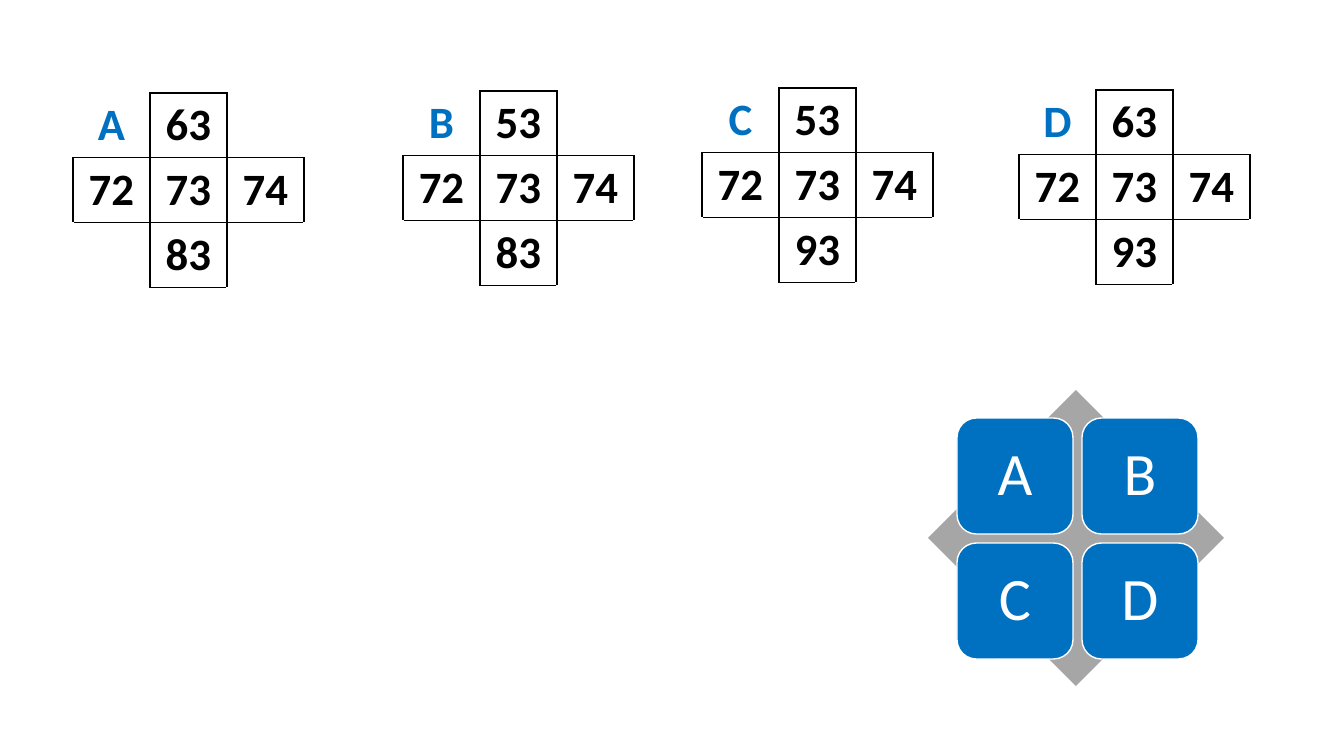
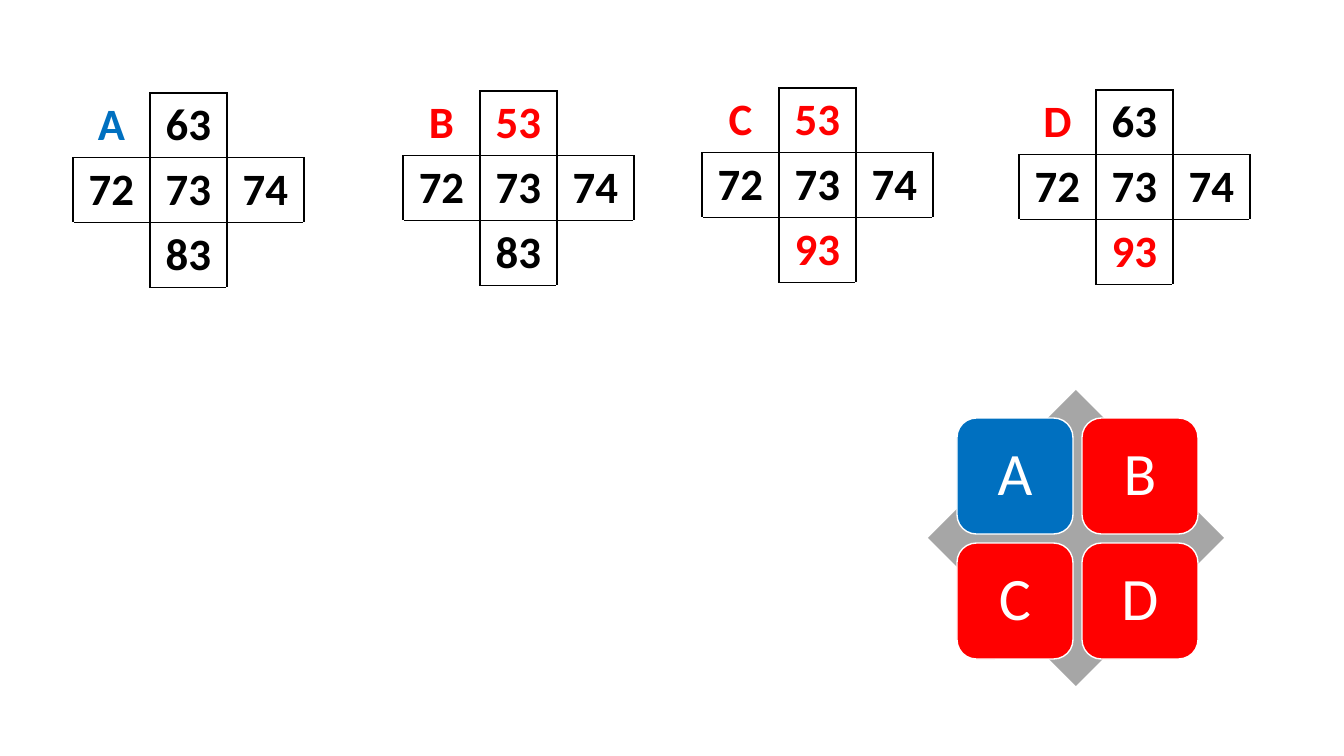
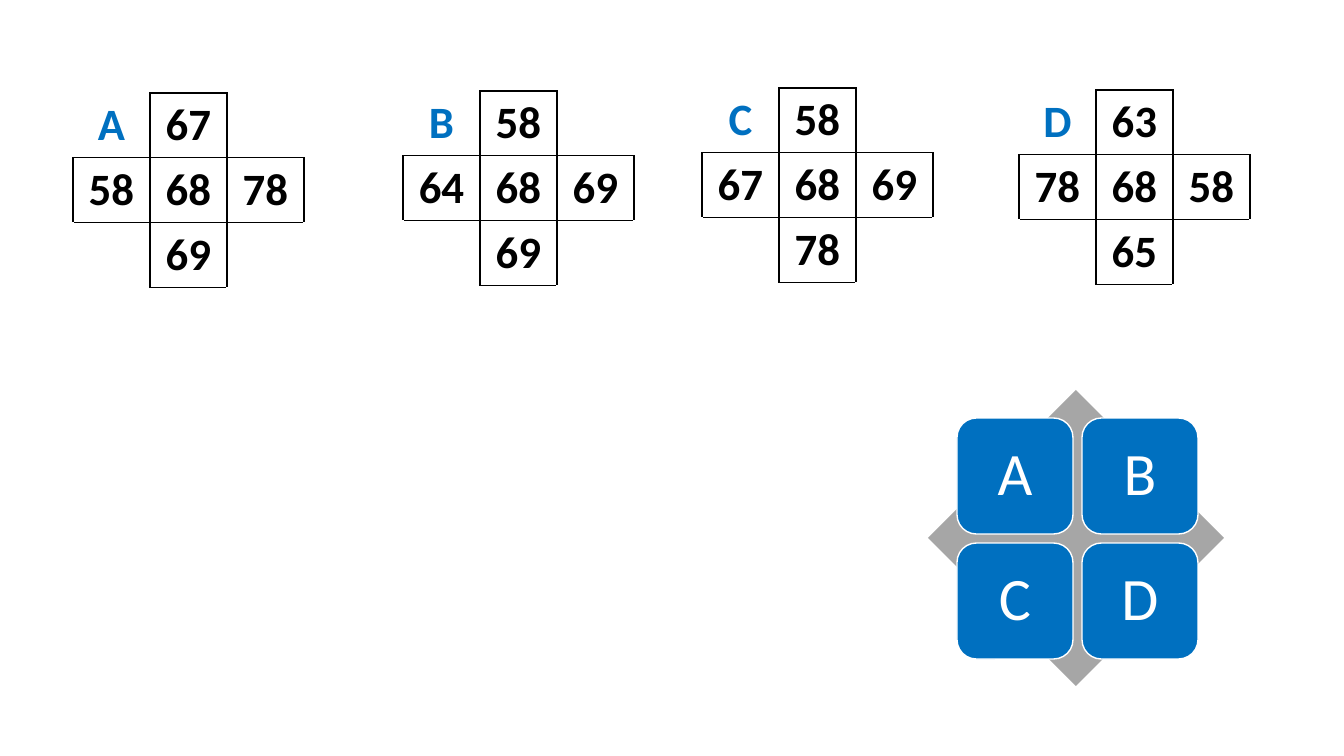
from lxml.etree import SubElement
from pptx import Presentation
from pptx.dml.color import RGBColor
from pptx.enum.shapes import MSO_SHAPE as SHAPE
from pptx.enum.text import MSO_ANCHOR as ANCHOR, PP_ALIGN as ALIGN
from pptx.oxml.ns import qn
from pptx.util import Pt

PX = 914400 / 100.8
COLORS = {"blue": "0070C0", "red": "FF0000", "black": "000000",
          "white": "FFFFFF", "gray": "A6A6A6"}
RGB = {name: RGBColor.from_string(h) for name, h in COLORS.items()}
CELL_FONT = {"name": "Calibri", "size": Pt(32), "bold": True}
TILE_FONT = {"name": "Calibri", "size": Pt(43), "bold": False}

# Shared layout in px
CROSS_POS = {"A": (73, 93), "B": (403, 91), "C": (702, 88), "D": (1019, 90)}
COL_W, ROW_H = 77, 64
DIAMOND = (928, 390, 296, 296)
TILE_X, TILE_Y, TILE, TILE_STEP, TILE_INSET = 957, 418, 116, 125, 24

# Each cross lists its top, left, centre, right and bottom number
CROSS_CELLS = [(0, 1), (1, 0), (1, 1), (1, 2), (2, 1)]
PUZZLE_1 = {"A": "63 72 73 74 83", "B": "53 72 73 74 83",
            "C": "53 72 73 74 93", "D": "63 72 73 74 93"}
PUZZLE_2 = {"A": "67 58 68 78 69", "B": "58 64 68 69 69",
            "C": "58 67 68 69 78", "D": "63 78 68 58 65"}
# Numbers in each puzzle, and those marked wrong
SLIDES = [(PUZZLE_1, set()), (PUZZLE_1, {"53", "93"}), (PUZZLE_2, set())]


def write(tf, text, fmt, color):
    p = tf.paragraphs[0]
    p.alignment = ALIGN.CENTER
    r = p.add_run()
    r.text = text
    for key, value in fmt.items():
        setattr(r.font, key, value)
    r.font.color.rgb = RGB[color]
    return p


def set_borders(cell, row, col):
    corner = row != 1 and col != 1
    outer = {"L": col == 0, "R": col == 2, "T": row == 0, "B": row == 2}
    tcPr = cell._tc.get_or_add_tcPr()
    for side in "LRTB":
        color = "white" if corner and outer[side] else "black"
        ln = SubElement(tcPr, qn(f"a:ln{side}"), w=str(Pt(1)))
        fill = SubElement(ln, qn("a:solidFill"))
        SubElement(fill, qn("a:srgbClr"), val=COLORS[color])
    cell.fill.background()


prs = Presentation()
prs.slide_width, prs.slide_height = round(1344 * PX), round(756 * PX)

for puzzle, wrong in SLIDES:
    s = prs.slides.add_slide(prs.slide_layouts[6])
    numbers = {letter: line.split() for letter, line in puzzle.items()}
    marks = {letter: "red" if wrong & set(values) else "blue"
             for letter, values in numbers.items()}

    # Number crosses
    for letter, (x, y) in CROSS_POS.items():
        box = [round(v * PX) for v in (x, y, 3 * COL_W, 3 * ROW_H)]
        tbl = s.shapes.add_table(3, 3, *box).table
        tbl.first_row = tbl.horz_banding = False
        for row in range(3):
            for col in range(3):
                set_borders(tbl.cell(row, col), row, col)
        write(tbl.cell(0, 0).text_frame, letter, CELL_FONT, marks[letter])
        for (row, col), number in zip(CROSS_CELLS, numbers[letter]):
            write(tbl.cell(row, col).text_frame, number, CELL_FONT,
                  "red" if number in wrong else "black")

    # Diamond behind the answer tiles
    sp = s.shapes.add_shape(SHAPE.DIAMOND, *[round(v * PX) for v in DIAMOND])
    sp.shadow.inherit = False
    sp.fill.solid()
    sp.fill.fore_color.rgb = RGB["gray"]
    sp.line.fill.background()

    # Answer tiles, two by two
    for i, (letter, color) in enumerate(marks.items()):
        row, col = divmod(i, 2)
        box = (TILE_X + col * TILE_STEP, TILE_Y + row * TILE_STEP, TILE, TILE)
        sp = s.shapes.add_shape(SHAPE.ROUNDED_RECTANGLE,
                                *[round(v * PX) for v in box])
        sp.shadow.inherit = False
        sp.fill.solid()
        sp.fill.fore_color.rgb = RGB[color]
        sp.line.color.rgb = RGB["white"]
        sp.line.width = Pt(1)
        tf = sp.text_frame
        tf.vertical_anchor = ANCHOR.MIDDLE
        for side in ("left", "right", "top", "bottom"):
            setattr(tf, f"margin_{side}", round(TILE_INSET * PX))
        write(tf, letter, TILE_FONT, "white").line_spacing = 0.9

prs.save("out.pptx")
